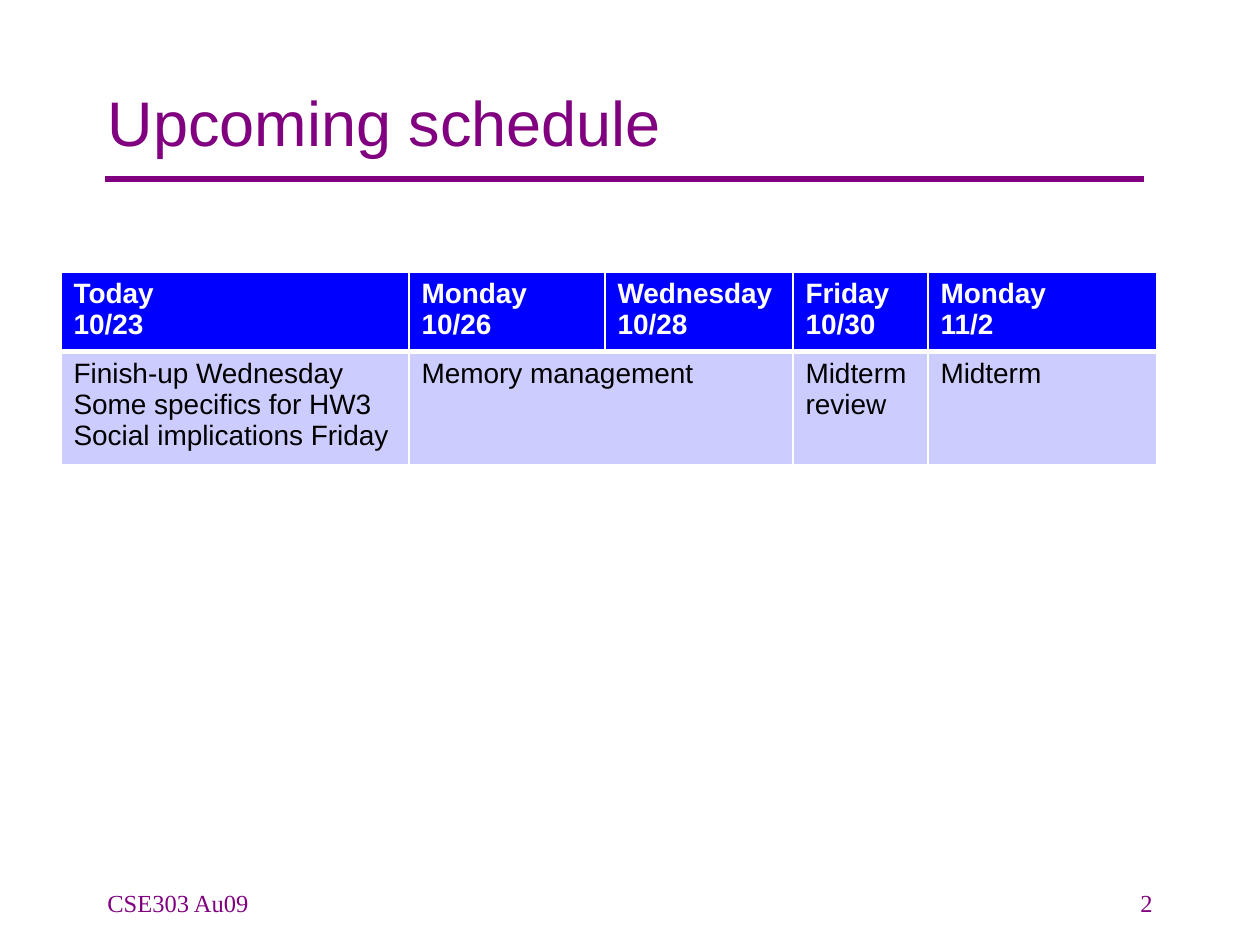
"""Build the upcoming schedule slide."""
import pptx
import pptx.dml.color
import pptx.enum.shapes
import pptx.enum.text
import pptx.oxml
import pptx.oxml.ns
import pptx.util
from lxml import etree

EMU_PER_PX = 914400 / 126
ALIGN = pptx.enum.text.PP_ALIGN
ANCHOR = pptx.enum.text.MSO_ANCHOR


def px(length):
    return pptx.util.Emu(round(length * EMU_PER_PX))


def rgb(value):
    return pptx.dml.color.RGBColor.from_string(value)


def write(frame, text, size=16, font="Arial", color="000000", bold=False, align=ALIGN.LEFT):
    frame.word_wrap = True
    frame.text = text
    for paragraph in frame.paragraphs:
        paragraph.alignment = align
        for run in paragraph.runs:
            run.font.size = pptx.util.Pt(size)
            run.font.name = font
            run.font.bold = bold
            run.font.color.rgb = rgb(color)
        for line_break in paragraph._p.findall(pptx.oxml.ns.qn("a:br")):
            etree.SubElement(line_break, pptx.oxml.ns.qn("a:rPr"), sz=str(size * 100))


class ScheduleSlide:
    accent = "800080"
    header_fill = "0000FF"
    body_fill = "CCCCFF"
    border = "FFFFFF"

    def __init__(self, deck):
        self.slide = deck.slides.add_slide(deck.slide_layouts[5])

    def title(self, text, left, top, width, height):
        heading = self.slide.shapes.title
        heading.left, heading.top, heading.width, heading.height = map(px, (left, top, width, height))
        write(heading.text_frame, text, size=36, color=self.accent)
        heading.text_frame.auto_size = pptx.enum.text.MSO_AUTO_SIZE.NONE
        heading.text_frame.vertical_anchor = ANCHOR.MIDDLE

    def rule(self, left, right, y, width):
        line = self.slide.shapes.add_connector(
            pptx.enum.shapes.MSO_CONNECTOR.STRAIGHT, px(left), px(y), px(right), px(y))
        line.line.color.rgb = rgb(self.accent)
        line.line.width = pptx.util.Pt(width)
        etree.SubElement(line._element.spPr, pptx.oxml.ns.qn("a:effectLst"))

    def footer(self, text, left, top, width, height, align):
        box = self.slide.shapes.add_textbox(*map(px, (left, top, width, height)))
        write(box.text_frame, text, size=14, font="Times New Roman", color=self.accent, align=align)

    def edges(self, cell, **widths):
        properties = cell._tc.get_or_add_tcPr()
        for side, width in widths.items():
            properties.append(pptx.oxml.parse_xml(
                f'<a:ln{side} {pptx.oxml.ns.nsdecls("a")} w="{pptx.util.Pt(width)}">'
                f'<a:solidFill><a:srgbClr val="{self.border}"/></a:solidFill></a:ln{side}>'))

    def table(self, rows, left, top, widths, heights):
        schedule = self.slide.shapes.add_table(
            len(rows), len(widths), px(left), px(top), px(sum(widths)), px(sum(heights))).table
        schedule.horz_banding = False
        for column, width in zip(schedule.columns, widths):
            column.width = px(width)
        for row, height in zip(schedule.rows, heights):
            row.height = px(height)
        for r, texts in enumerate(rows):
            header = r == 0
            for c, text in enumerate(texts):
                cell = schedule.cell(r, c)
                self.edges(cell, L=1, R=1, T=1 if header else 3, B=3 if header else 1)
                cell.fill.solid()
                cell.fill.fore_color.rgb = rgb(self.header_fill if header else self.body_fill)
                if text is None:
                    schedule.cell(r, c - 1).merge(cell)
                else:
                    write(cell.text_frame, text, bold=header, color="FFFFFF" if header else "000000")


def main():
    deck = pptx.Presentation()
    deck.slide_width, deck.slide_height = px(1260), px(945)
    page = ScheduleSlide(deck)
    page.rule(105, 1144, 179, 3)
    page.title("Upcoming schedule", 95, 42, 1071, 158)
    page.footer("CSE303 Au09", 95, 882, 262, 63, ALIGN.LEFT)
    page.footer("2", 903, 882, 262, 63, ALIGN.RIGHT)
    days = ["Today\v10/23", "Monday\v10/26", "Wednesday\v10/28", "Friday\v10/30", "Monday\v11/2"]
    topics = ["Finish-up Wednesday\nSome specifics for HW3\nSocial implications Friday",
              "Memory management", None, "Midterm\vreview", "Midterm"]
    page.table([days, topics], 61, 272, [348, 196, 188, 135, 229], [75, 106])
    deck.save("out.pptx")


if __name__ == "__main__":
    main()
